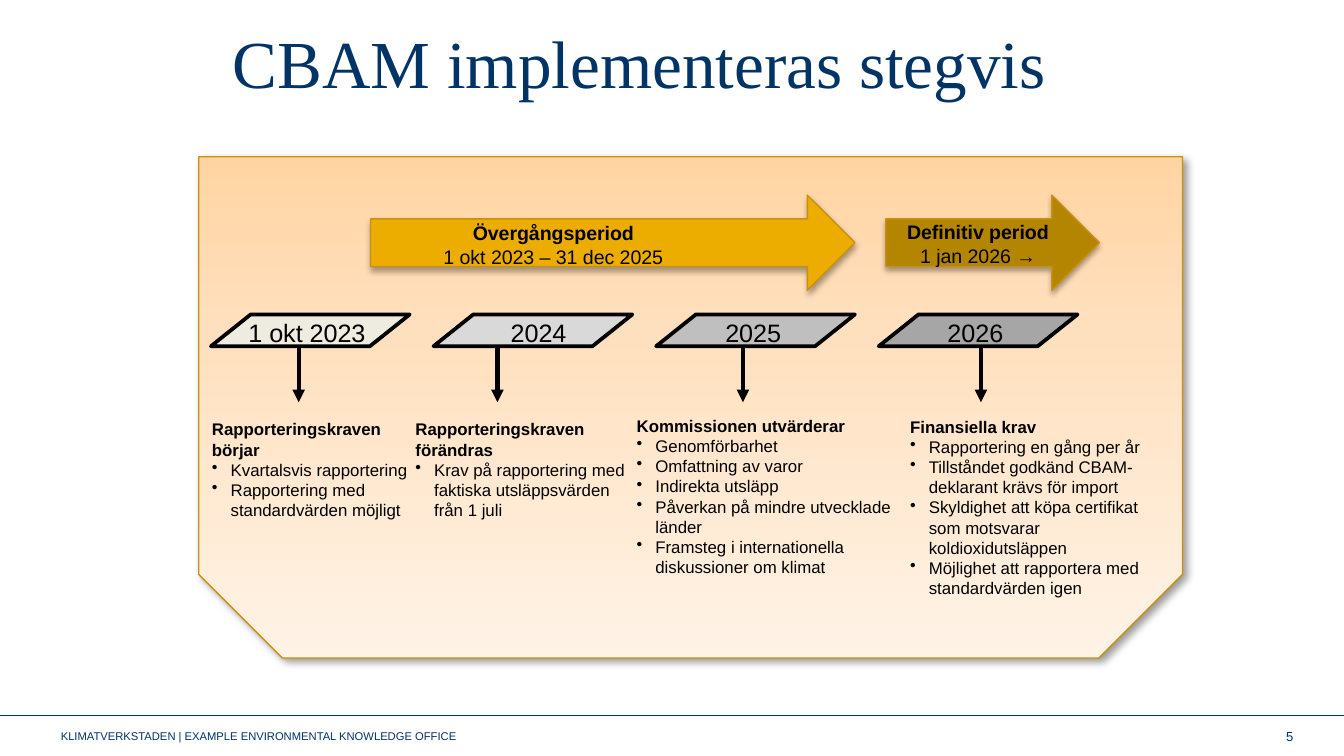
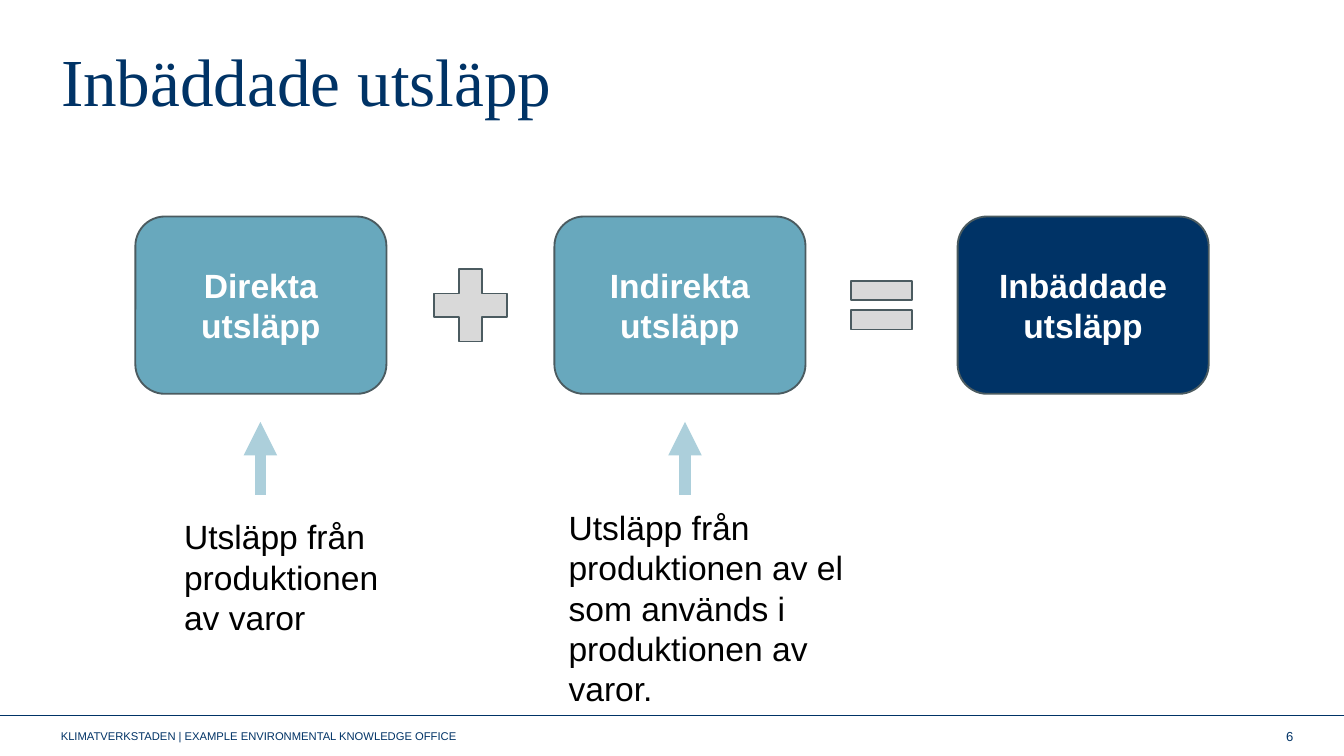
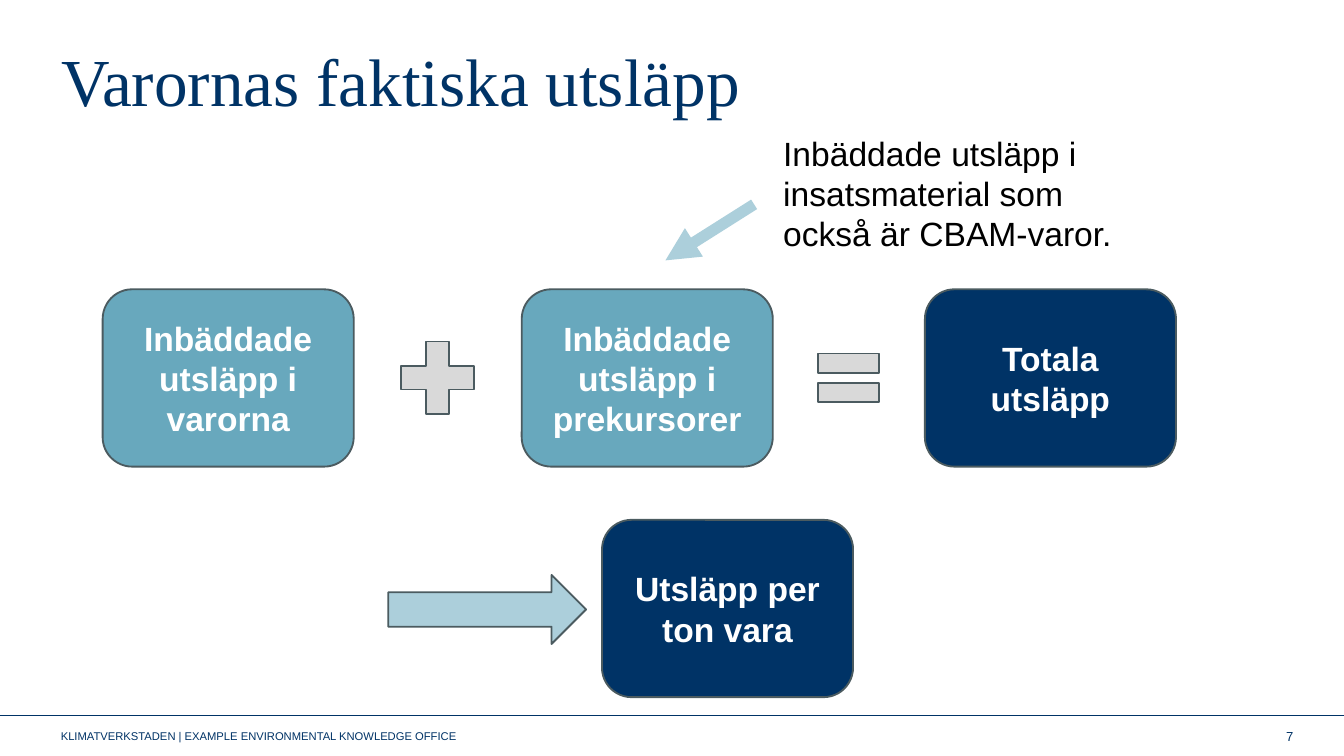
from dataclasses import dataclass

from lxml import etree
from pptx import Presentation
from pptx.dml.color import RGBColor
from pptx.enum.shapes import MSO_CONNECTOR, MSO_SHAPE
from pptx.enum.text import MSO_ANCHOR, MSO_AUTO_SIZE, PP_ALIGN
from pptx.oxml.ns import qn
from pptx.util import Pt

LEFT, CENTER, RIGHT = PP_ALIGN.LEFT, PP_ALIGN.CENTER, PP_ALIGN.RIGHT
TOP, MIDDLE = MSO_ANCHOR.TOP, MSO_ANCHOR.MIDDLE
FIT_SHAPE, NO_FIT = MSO_AUTO_SIZE.SHAPE_TO_FIT_TEXT, MSO_AUTO_SIZE.NONE
STRAIGHT = MSO_CONNECTOR.STRAIGHT
PANEL, PARALLELOGRAM = MSO_SHAPE.SNIP_2_SAME_RECTANGLE, MSO_SHAPE.FLOWCHART_DATA
BLOCK_ARROW, ROUNDED = MSO_SHAPE.RIGHT_ARROW, MSO_SHAPE.ROUNDED_RECTANGLE
PLUS, EQUAL = MSO_SHAPE.MATH_PLUS, MSO_SHAPE.MATH_EQUAL

TITLE_ONLY = 5
BULLET_INDENT = 10
FOOTER = "KLIMATVERKSTADEN | EXAMPLE ENVIRONMENTAL KNOWLEDGE OFFICE"


@dataclass(frozen=True)
class Theme:
    navy: str = "003366"
    teal: str = "68A8BD"
    pale_teal: str = "ACCFDB"
    slate: str = "4B5B60"
    grey: str = "D9D9D9"
    gold: str = "ECAC00"
    dark_gold: str = "B48500"
    gold_line: str = "C79211"
    panel_stops: tuple = ((0, "FFD4A3"), (35, "FFE0BE"), (100, "FFF3E6"))
    black: str = "000000"
    white: str = "FFFFFF"
    title_font: str = "Times New Roman"
    body_font: str = "Arial"
    title_size: float = 36
    title_spacing: float = 39.6
    body_size: float = 18
    date_size: float = 13.5
    period_size: float = 10.5
    note_size: float = 9
    number_size: float = 7
    footer_size: float = 6


T = Theme()


@dataclass(frozen=True)
class Box:
    x: float
    y: float
    w: float
    h: float

    def points(self) -> tuple:
        return Pt(self.x), Pt(self.y), Pt(self.w), Pt(self.h)


@dataclass(frozen=True)
class Shadow:
    alpha: int
    blur: float
    dist: float
    angle: int


@dataclass(frozen=True)
class Period:
    arrow: Box
    fill: str
    label: Box
    name: str
    dates: str


@dataclass(frozen=True)
class Step:
    date: str
    fill: str
    date_x: float
    arrow_x: float
    note: Box
    heading: str
    bullets: tuple


@dataclass(frozen=True)
class Term:
    """One part of an equation, placed from the equation's left edge."""
    dx: float
    w: float
    h: float
    kind: int
    fill: str


PANEL_SHADOW = Shadow(40, 4, 3, 45)
PERIOD_SHADOW = Shadow(35, 3.1, 1.8, 90)

PERIODS = (
    Period(Box(198.5, 104.5, 259.5, 51), T.gold, Box(198.5, 115, 196, 32.5),
           "Övergångsperiod", "1 okt 2023 – 31 dec 2025"),
    Period(Box(474.5, 104.5, 114.5, 51), T.dark_gold, Box(426, 114.5, 196, 32.5),
           "Definitiv period", "1 jan 2026 →"),
)

STEPS = (
    Step("1 okt 2023", "EEECE1", 126, 160, Box(106.5, 221, 122.5, 62),
         "Rapporteringskraven börjar",
         ("Kvartalsvis rapportering", "Rapportering med standardvärden möjligt")),
    Step("2024", "D9D9D9", 266.5, 266.5, Box(215.5, 221, 134, 62),
         "Rapporteringskraven förändras",
         ("Krav på rapportering med faktiska utsläppsvärden från 1 juli",)),
    Step("2025", "BFBFBF", 381.5, 398, Box(334, 219, 159, 138),
         "Kommissionen utvärderar",
         ("Genomförbarhet", "Omfattning av varor", "Indirekta utsläpp",
          "Påverkan på mindre utvecklade länder",
          "Framsteg i internationella diskussioner om klimat")),
    Step("2026", "A6A6A6", 500.5, 525.5, Box(480.5, 219.5, 139.5, 105),
         "Finansiella krav",
         ("Rapportering en gång per år",
          "Tillståndet godkänd CBAM-deklarant krävs för import",
          "Skyldighet att köpa certifikat som motsvarar koldioxidutsläppen",
          "Möjlighet att rapportera med standardvärden igen")),
)

CARD_W, CARD_H = 134.5, 95
EQUATION = (
    Term(0, CARD_W, CARD_H, ROUNDED, T.teal),
    Term(153, 53, 53, PLUS, T.grey),
    Term(224.5, CARD_W, CARD_H, ROUNDED, T.teal),
    Term(377.5, 44.5, 44.5, EQUAL, T.grey),
    Term(440.5, CARD_W, CARD_H, ROUNDED, T.navy),
)


def rgb(color: str) -> RGBColor:
    return RGBColor.from_string(color)


def style_paragraph(p, size: float, color: str = T.black, bold: bool = False,
                    align: int = LEFT, font: str = T.body_font) -> None:
    p.alignment = align
    p.font.name, p.font.size, p.font.bold = font, Pt(size), bold
    p.font.color.rgb = rgb(color)


def add_bullet(p) -> None:
    pPr = p._p.get_or_add_pPr()
    pPr.set("marL", str(Pt(BULLET_INDENT)))
    pPr.set("indent", str(-Pt(BULLET_INDENT)))
    bullet = etree.Element(qn("a:buChar"), char="•")
    pPr.insert_element_before(bullet, "a:tabLst", "a:defRPr", "a:extLst")


def add_text(s, box: Box, lines: tuple, size: float, color: str = T.black,
             align: int = LEFT, anchor: int = TOP, heading: bool = False,
             bullets: bool = False) -> None:
    """Add a text box; with heading, the first line is bold and never bulleted."""
    tf = s.shapes.add_textbox(*box.points()).text_frame
    tf.word_wrap, tf.vertical_anchor = True, anchor
    tf.auto_size = FIT_SHAPE if anchor == TOP else NO_FIT
    for i, line in enumerate(lines):
        p = tf.paragraphs[0] if i == 0 else tf.add_paragraph()
        p.text = line
        style_paragraph(p, size, color, heading and i == 0, align)
        if bullets and i > 0:
            add_bullet(p)


def add_shape(s, kind: int, box: Box, fill: str, line: str, width: float):
    sp = s.shapes.add_shape(kind, *box.points())
    sp.shadow.inherit = False
    sp.fill.solid()
    sp.fill.fore_color.rgb = rgb(fill)
    sp.line.color.rgb = rgb(line)
    sp.line.width = Pt(width)
    return sp


def add_shadow(sp, shadow: Shadow) -> None:
    effects = sp._element.spPr.find(qn("a:effectLst"))
    outer = etree.SubElement(
        effects, qn("a:outerShdw"), blurRad=str(Pt(shadow.blur)),
        dist=str(Pt(shadow.dist)), dir=str(shadow.angle * 60000), rotWithShape="0")
    color = etree.SubElement(outer, qn("a:srgbClr"), val=T.black)
    etree.SubElement(color, qn("a:alpha"), val=str(shadow.alpha * 1000))


def set_gradient(sp, stops: tuple, angle: int) -> None:
    sp.fill.gradient()
    sp.fill.gradient_angle = angle
    stop_list = sp._element.spPr.find(qn("a:gradFill")).find(qn("a:gsLst"))
    for old in list(stop_list):
        stop_list.remove(old)
    for position, color in stops:
        stop = etree.SubElement(stop_list, qn("a:gs"), pos=str(position * 1000))
        etree.SubElement(stop, qn("a:srgbClr"), val=color)


def add_line(s, start: tuple, end: tuple, color: str, width: float,
             arrow: bool = False) -> None:
    line = s.shapes.add_connector(STRAIGHT, *map(Pt, start + end))
    line.line.color.rgb = rgb(color)
    line.line.width = Pt(width)
    if arrow:
        etree.SubElement(line.line._get_or_add_ln(), qn("a:tailEnd"), type="triangle")
    etree.SubElement(line._element.spPr, qn("a:effectLst"))


def add_card(s, box: Box, text: str, fill: str) -> None:
    sp = add_shape(s, ROUNDED, box, fill, T.slate, 1)
    tf = sp.text_frame
    tf.word_wrap, tf.vertical_anchor = True, MIDDLE
    p = tf.paragraphs[0]
    p.text = text
    style_paragraph(p, T.body_size, T.white, True, CENTER)


def add_equation(s, x: float, y: float, names: tuple) -> None:
    """Draw card + card = card, with the signs centred on the cards."""
    labels = iter(names)
    for term in EQUATION:
        box = Box(x + term.dx, y + (CARD_H - term.h) / 2, term.w, term.h)
        if term.kind == ROUNDED:
            add_card(s, box, next(labels), term.fill)
        else:
            add_shape(s, term.kind, box, term.fill, T.slate, 1)


def new_slide(prs, number: int, title: str,
              title_box: Box = Box(25.5, 21, 674.5, 57.5)):
    s = prs.slides.add_slide(prs.slide_layouts[TITLE_ONLY])
    sp = s.shapes.title
    sp.left, sp.top, sp.width, sp.height = title_box.points()
    tf = sp.text_frame
    tf.word_wrap, tf.auto_size, tf.vertical_anchor = True, NO_FIT, TOP
    p = tf.paragraphs[0]
    p.text = title
    p.line_spacing = Pt(T.title_spacing)
    style_paragraph(p, T.title_size, T.navy, font=T.title_font)

    add_line(s, (0, 383.5), (720, 383.5), T.navy, 0.4)
    add_text(s, Box(25.5, 383.5, 243.5, 21.5), (FOOTER,), T.footer_size, T.navy,
             anchor=MIDDLE)
    add_text(s, Box(538, 383.5, 162, 21.5), (str(number),), T.number_size, T.navy,
             RIGHT, MIDDLE)
    return s


def build_timeline(prs) -> None:
    s = new_slide(prs, 5, "CBAM implementeras stegvis", Box(117.5, 11.5, 582.5, 90.5))
    panel = add_shape(s, PANEL, Box(106.5, 84, 527, 268.5), T.white, T.gold_line, 0.75)
    panel.rotation = 180
    set_gradient(panel, T.panel_stops, 90)
    add_shadow(panel, PANEL_SHADOW)

    for period in PERIODS:
        sp = add_shape(s, BLOCK_ARROW, period.arrow, period.fill, T.gold_line, 0.75)
        add_shadow(sp, PERIOD_SHADOW)
        add_text(s, period.label, (period.name, period.dates), T.period_size,
                 align=CENTER, heading=True)

    for i, step in enumerate(STEPS):
        add_shape(s, PARALLELOGRAM, Box(113 + i * 119.25, 168.5, 106.5, 17),
                  step.fill, T.black, 2)
        add_text(s, Box(step.date_x, 166.5, 89, 24), (step.date,), T.date_size)
        add_line(s, (step.arrow_x, 186), (step.arrow_x, 215.5), T.black, 2.25, True)
        add_text(s, step.note, (step.heading, *step.bullets), T.note_size,
                 heading=True, bullets=True)


def build_embedded(prs) -> None:
    s = new_slide(prs, 6, "Inbäddade utsläpp")
    add_equation(s, 72.5, 116,
                 ("Direkta utsläpp", "Indirekta utsläpp", "Inbäddade utsläpp"))
    notes = (
        (139.5, Box(91.5, 273, 134.5, 73), "Utsläpp från produktionen av varor"),
        (367, Box(297.5, 268, 162, 116.5),
         "Utsläpp från produktionen av el som används i produktionen av varor."),
    )
    for arrow_x, box, text in notes:
        add_text(s, box, (text,), T.body_size)
        add_line(s, (arrow_x, 265), (arrow_x, 226), T.pale_teal, 6, True)


def build_actual(prs) -> None:
    s = new_slide(prs, 7, "Varornas faktiska utsläpp")
    add_equation(s, 55, 155, ("Inbäddade utsläpp i varorna",
                              "Inbäddade utsläpp i prekursorer", "Totala utsläpp"))
    add_text(s, Box(412.5, 67.5, 216, 73),
             ("Inbäddade utsläpp i insatsmaterial som också är CBAM-varor.",),
             T.body_size)
    add_line(s, (404, 109.5), (356.5, 139.5), T.pale_teal, 6, True)
    add_shape(s, BLOCK_ARROW, Box(208, 308, 106, 37), T.pale_teal, T.slate, 1)
    add_card(s, Box(322.5, 278.5, CARD_W, CARD_H), "Utsläpp per ton vara", T.navy)


def main() -> None:
    prs = Presentation()
    prs.slide_width, prs.slide_height = Pt(720), Pt(405)
    build_timeline(prs)
    build_embedded(prs)
    build_actual(prs)
    prs.save("out.pptx")


if __name__ == "__main__":
    main()
